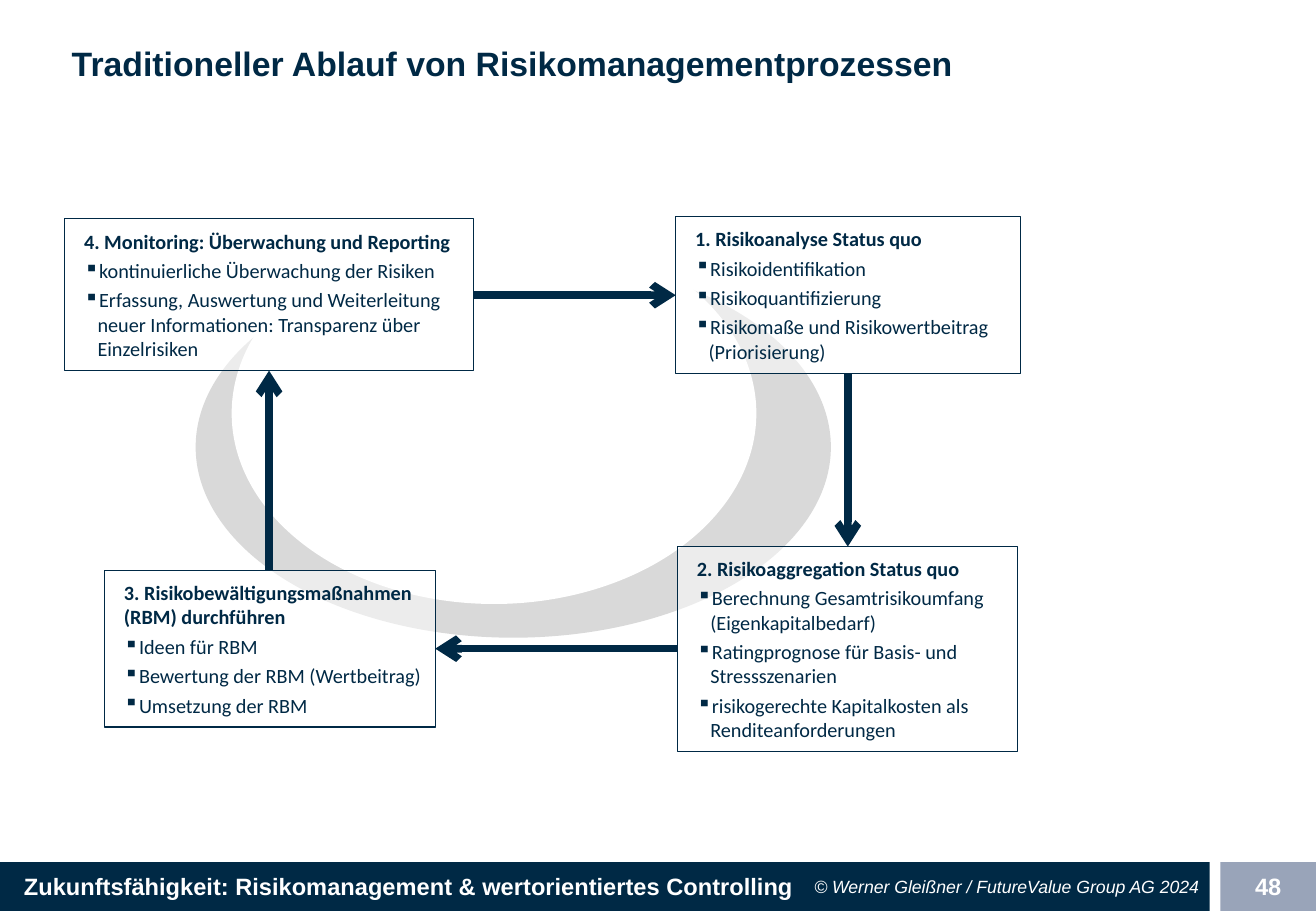
from dataclasses import dataclass

from pptx import Presentation
from pptx.dml.color import RGBColor
from pptx.enum.shapes import MSO_CONNECTOR, MSO_SHAPE
from pptx.enum.text import MSO_ANCHOR, MSO_AUTO_SIZE, PP_ALIGN
from pptx.oxml.ns import qn
from pptx.util import Pt

RECTANGLE, OVAL = MSO_SHAPE.RECTANGLE, MSO_SHAPE.OVAL
STRAIGHT = MSO_CONNECTOR.STRAIGHT
MIDDLE, NO_FIT = MSO_ANCHOR.MIDDLE, MSO_AUTO_SIZE.NONE
LEFT, CENTER, RIGHT = PP_ALIGN.LEFT, PP_ALIGN.CENTER, PP_ALIGN.RIGHT

COLORS = {"navy": "002945", "slate": "99A4B9", "ring": "D9D9D9", "white": "FFFFFF"}
TITLE_ONLY = 5
BULLET_INDENT = 8


@dataclass
class Area:
    left: float
    top: float
    width: float
    height: float

    @property
    def right(self) -> float:
        return self.left + self.width

    @property
    def bottom(self) -> float:
        return self.top + self.height

    def lengths(self) -> list:
        return [Pt(value) for value in (self.left, self.top, self.width, self.height)]


@dataclass
class Step:
    area: Area
    heading: str
    points: list[str]


@dataclass
class FooterPart:
    area: Area
    fill: str | None
    text: str
    align: PP_ALIGN
    font: dict
    inset: float = 6
    wrap: bool = True


@dataclass
class Arrow:
    start: tuple[float, float]
    end: tuple[float, float]


def color(name: str) -> RGBColor:
    return RGBColor.from_string(COLORS[name])


def apply(target, values: dict) -> None:
    for name, value in values.items():
        setattr(target, name, value)


def format_frame(frame, left: float, vertical: float, wrap: bool = True) -> None:
    apply(frame, {
        "margin_left": Pt(left), "margin_right": Pt(6),
        "margin_top": Pt(vertical), "margin_bottom": Pt(vertical),
        "vertical_anchor": MIDDLE, "word_wrap": wrap, "auto_size": NO_FIT,
    })


def write(para, text: str, font_color: str, font: dict, align: PP_ALIGN = LEFT) -> None:
    para.alignment = align
    span = para.add_run()
    span.text = text
    apply(span.font, font)
    span.font.color.rgb = color(font_color)


def add_form(page, kind: MSO_SHAPE, area: Area, fill: str):
    form = page.shapes.add_shape(kind, *area.lengths())
    form.shadow.inherit = False
    form.fill.solid()
    form.fill.fore_color.rgb = color(fill)
    form.line.fill.background()
    return form


def add_bullet(para) -> None:
    properties = para._p.get_or_add_pPr()
    properties.set("marL", str(Pt(BULLET_INDENT)))
    properties.set("indent", str(-Pt(BULLET_INDENT)))
    bullet = properties.makeelement(qn("a:buChar"), {"char": "▪"})
    properties.append(bullet)


def add_step(page, step: Step) -> None:
    box = add_form(page, RECTANGLE, step.area, "white")
    fill_color = box.fill._xPr.find(qn("a:solidFill"))[0]
    fill_color.append(fill_color.makeelement(qn("a:alpha"), {"val": "50000"}))
    box.line.color.rgb = color("navy")
    box.line.width = Pt(0.75)
    frame = box.text_frame
    format_frame(frame, 11.5, 5.75)
    for index, text in enumerate([step.heading, *step.points]):
        para = frame.add_paragraph() if index else frame.paragraphs[0]
        para.space_after = Pt(3)
        if index:
            add_bullet(para)
        write(para, text, "navy", {"name": "Calibri", "size": Pt(12), "bold": index == 0})


def add_footer_part(page, part: FooterPart) -> None:
    if part.fill:
        box = add_form(page, RECTANGLE, part.area, part.fill)
    else:
        box = page.shapes.add_textbox(*part.area.lengths())
    format_frame(box.text_frame, part.inset, 3, part.wrap)
    write(box.text_frame.paragraphs[0], part.text, "white", part.font, part.align)


def add_arrow(page, arrow: Arrow) -> None:
    ends = [Pt(value) for value in (*arrow.start, *arrow.end)]
    connector = page.shapes.add_connector(STRAIGHT, *ends)
    connector.line.color.rgb = color("navy")
    connector.line.width = Pt(4.5)
    line = connector.line._ln
    line.append(line.makeelement(qn("a:tailEnd"), {"type": "arrow"}))
    properties = connector._element.spPr
    properties.append(properties.makeelement(qn("a:effectLst"), {}))


ANALYSIS = Step(Area(400.5, 128.2, 204.2, 93.2), "1. Risikoanalyse Status quo", [
    "Risikoidentifikation",
    "Risikoquantifizierung",
    "Risikomaße und Risikowertbeitrag (Priorisierung)",
])
AGGREGATION = Step(Area(401.5, 324, 201.8, 121.4), "2. Risikoaggregation Status quo", [
    "Berechnung Gesamtrisikoumfang (Eigenkapitalbedarf)",
    "Ratingprognose für Basis- und Stressszenarien",
    "risikogerechte Kapitalkosten als Renditeanforderungen",
])
MEASURES = Step(Area(62, 338.2, 196, 92.8), "3. Risikobewältigungsmaßnahmen (RBM) durchführen", [
    "Ideen für RBM",
    "Bewertung der RBM (Wertbeitrag)",
    "Umsetzung der RBM",
])
MONITORING = Step(Area(38.3, 129.7, 242.4, 90), "4. Monitoring: Überwachung und Reporting", [
    "kontinuierliche Überwachung der Risiken",
    "Erfassung, Auswertung und Weiterleitung neuer Informationen: "
    "Transparenz über Einzelrisiken",
])

# Arrows run from box edge to box edge
UPPER_Y, LOWER_Y, LEFT_X, RIGHT_X = 175, 384.5, 159.5, 502.5
ARROWS = [
    Arrow((MONITORING.area.right, UPPER_Y), (ANALYSIS.area.left, UPPER_Y)),
    Arrow((LEFT_X, MEASURES.area.top), (LEFT_X, MONITORING.area.bottom)),
    Arrow((RIGHT_X, ANALYSIS.area.bottom), (RIGHT_X, AGGREGATION.area.top)),
    Arrow((AGGREGATION.area.left, LOWER_Y), (MEASURES.area.right, LOWER_Y)),
]

FOOTER_TOP, FOOTER_HEIGHT = 511, 29
STRONG = {"name": "Arial", "size": Pt(14), "bold": True}
FOOTER = [
    FooterPart(Area(0, FOOTER_TOP, 717, FOOTER_HEIGHT), "navy",
               "Zukunftsfähigkeit: Risikomanagement & wertorientiertes Controlling",
               LEFT, STRONG, inset=14.2, wrap=False),
    FooterPart(Area(723.4, FOOTER_TOP, 56.6, FOOTER_HEIGHT), "slate", "48", CENTER, STRONG),
    FooterPart(Area(405, FOOTER_TOP, 312, FOOTER_HEIGHT), None,
               "© Werner Gleißner / FutureValue Group AG 2024",
               RIGHT, {"name": "Arial", "size": Pt(10.5), "italic": True}),
]


def main() -> None:
    deck = Presentation()
    apply(deck, {"slide_width": Pt(780), "slide_height": Pt(540)})
    page = deck.slides.add_slide(deck.slide_layouts[TITLE_ONLY])

    # Footer
    for part in FOOTER:
        add_footer_part(page, part)

    # Title
    title = page.shapes.title
    apply(title, dict(zip(("left", "top", "width", "height"),
                          Area(36.5, 11.7, 680.5, 51).lengths())))
    format_frame(title.text_frame, 6, 3)
    write(title.text_frame.paragraphs[0],
          "Traditioneller Ablauf von Risikomanagementprozessen", "navy",
          {"name": "Arial", "size": Pt(20), "bold": True})

    # Crescent behind the cycle
    add_form(page, OVAL, Area(116, 152, 376.5, 226), "ring")
    add_form(page, OVAL, Area(137.3, 132, 311, 226), "white")

    # Cycle of steps
    for step in (MEASURES, ANALYSIS, AGGREGATION, MONITORING):
        add_step(page, step)
    for arrow in ARROWS:
        add_arrow(page, arrow)

    deck.save("out.pptx")


if __name__ == "__main__":
    main()
